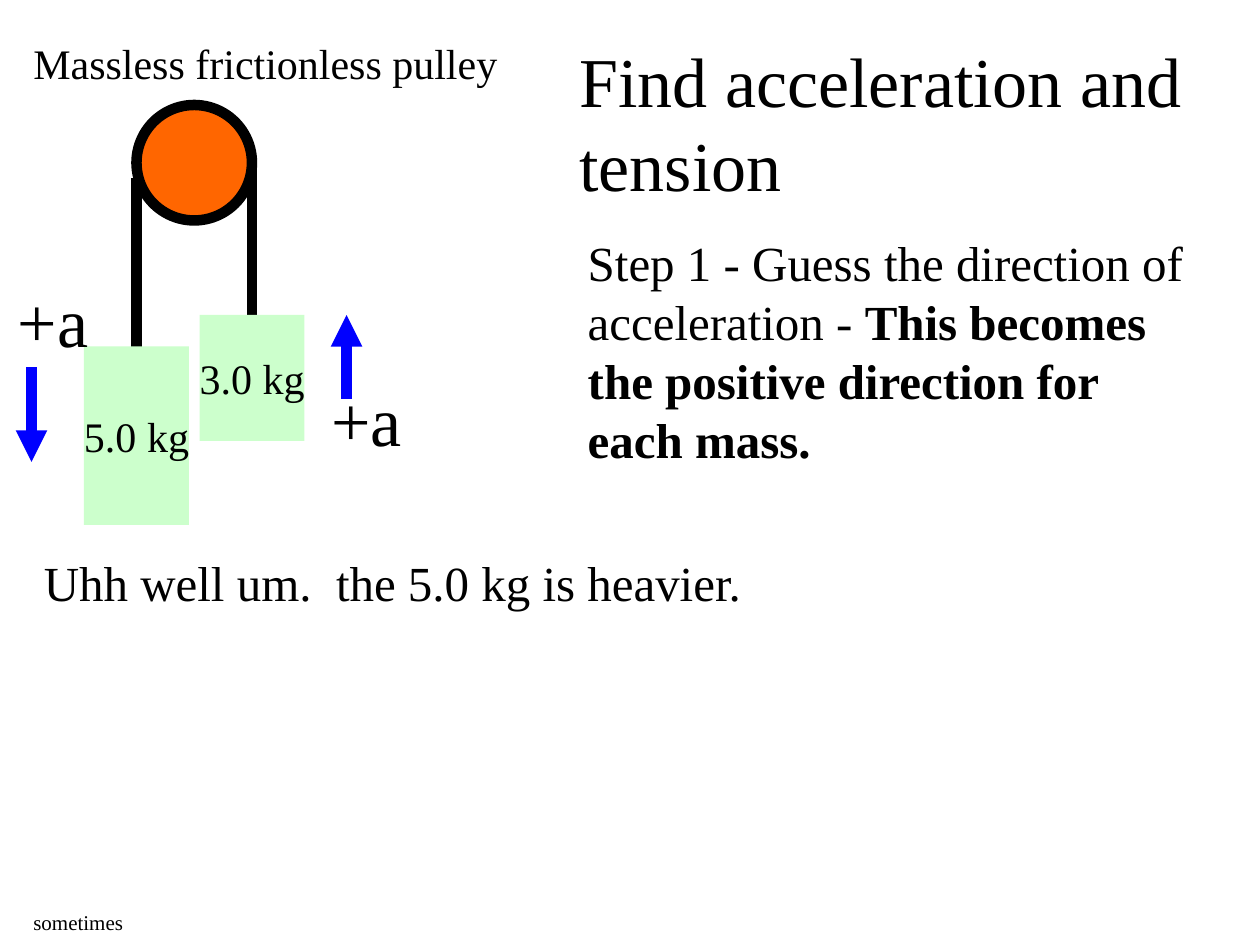
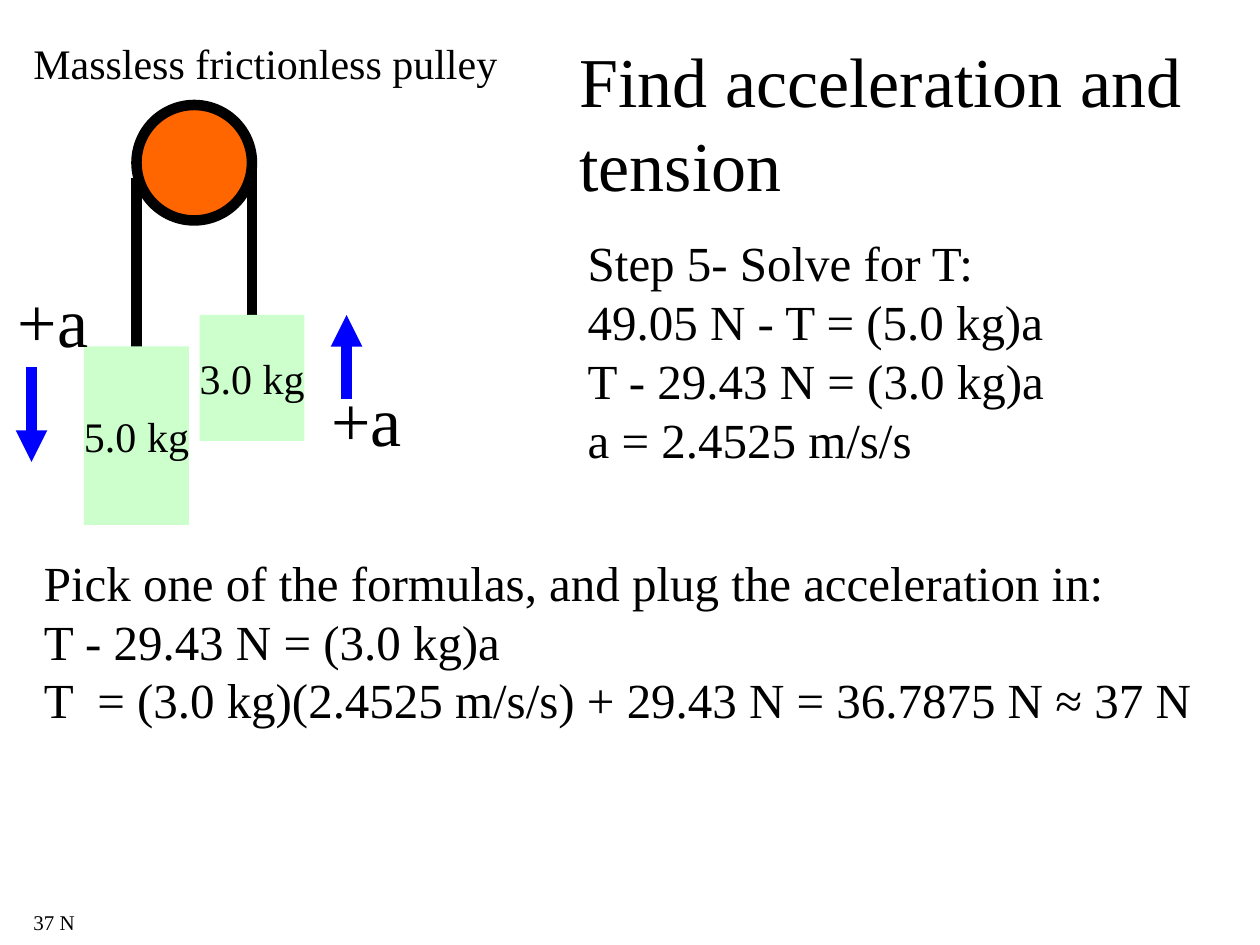
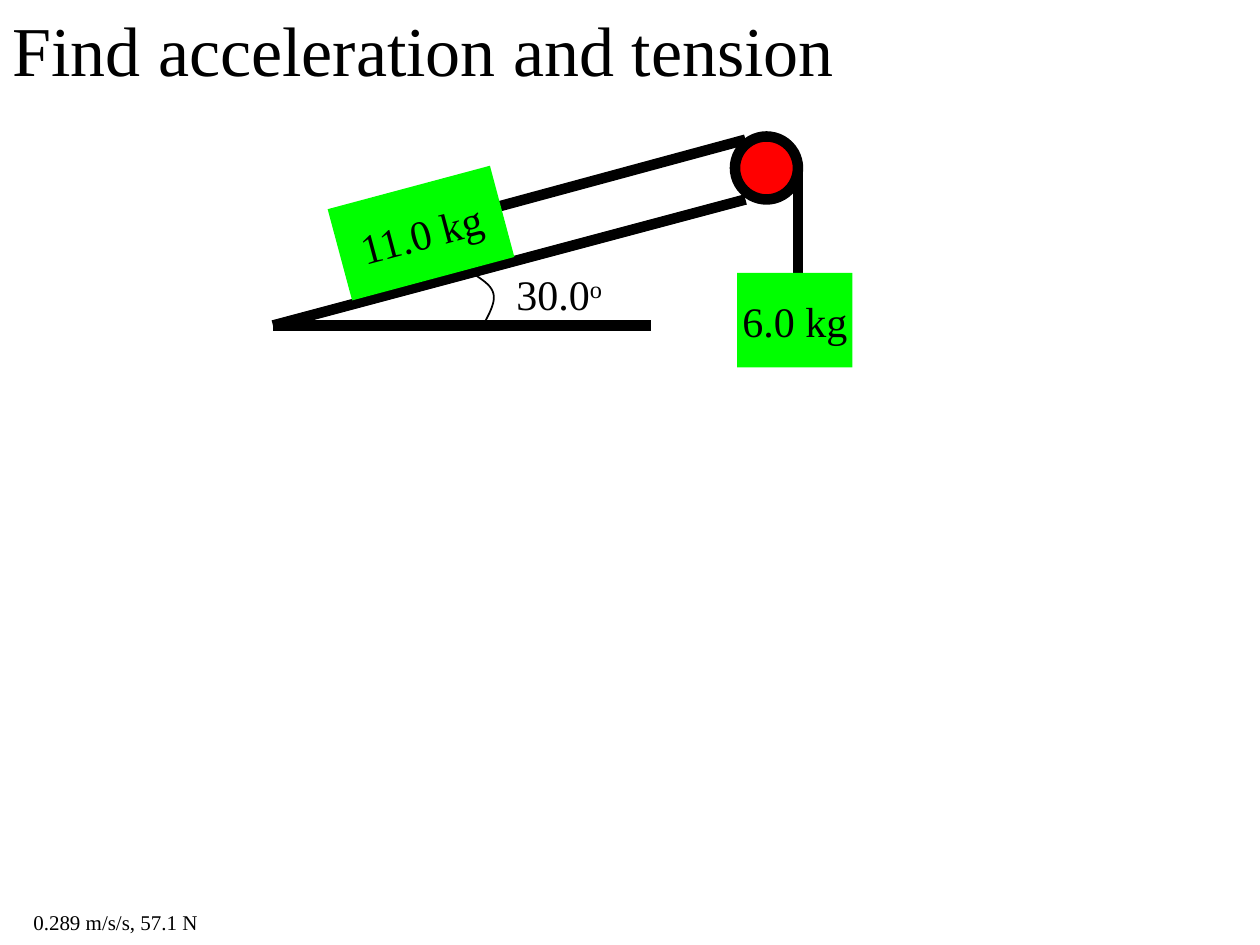
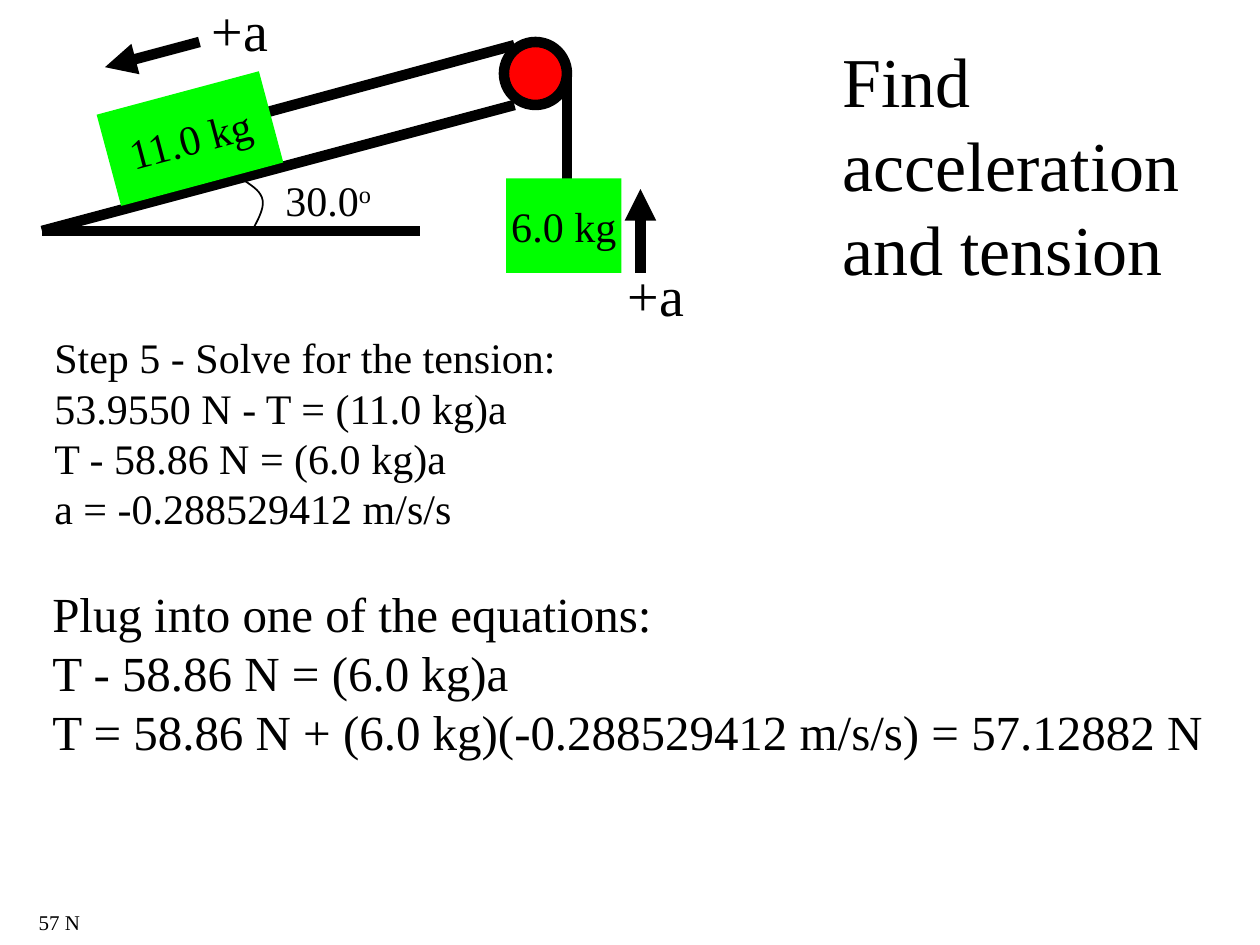
import lxml.etree
import pptx
import pptx.dml.color
import pptx.enum.shapes
import pptx.enum.text
import pptx.oxml.ns
import pptx.util

BLACK = pptx.dml.color.RGBColor(0x00, 0x00, 0x00)
BLUE = pptx.dml.color.RGBColor(0x00, 0x00, 0xFF)
ORANGE = pptx.dml.color.RGBColor(0xFF, 0x66, 0x00)
MINT = pptx.dml.color.RGBColor(0xCC, 0xFF, 0xCC)
RED = pptx.dml.color.RGBColor(0xFF, 0x00, 0x00)
GREEN = pptx.dml.color.RGBColor(0x00, 0xFF, 0x00)

FONT = "Times New Roman"
TITLE = "Find acceleration and tension"
CELL = pptx.util.Inches(1 / 12)  # the slide is a grid of 120 columns by 90 rows
STROKE = pptx.util.Pt(6)
FOOTER_TOP, FOOTER_HEIGHT = 86, 3.6
SHAPES = pptx.enum.shapes.MSO_SHAPE
ALIGN = pptx.enum.text.PP_ALIGN
ANCHOR = pptx.enum.text.MSO_ANCHOR
AUTO_SIZE = pptx.enum.text.MSO_AUTO_SIZE


def write(shape, paragraphs, size, align=ALIGN.LEFT, **frame_format):
    """Fill a shape; a paragraph is a string or a list of (text, style) runs."""
    frame = shape.text_frame
    for name, value in frame_format.items():
        setattr(frame, name, value)
    for index, content in enumerate(paragraphs):
        paragraph = frame.add_paragraph() if index else frame.paragraphs[0]
        paragraph.alignment = align
        runs = [(content, None)] if isinstance(content, str) else content
        for text, style in runs:
            run = paragraph.add_run()
            run.text = text
            run.font.name = FONT
            run.font.size = pptx.util.Pt(size)
            run.font.color.rgb = BLACK
            if style == "bold":
                run.font.bold = True
            elif style == "superscript":
                run.font._element.set("baseline", "30000")


def draw_line(slide, start, end, color=BLACK, arrow=False):
    ends = [round(value * CELL) for value in (*start, *end)]
    connector = slide.shapes.add_connector(pptx.enum.shapes.MSO_CONNECTOR.STRAIGHT, *ends)
    connector.line.color.rgb = color
    connector.line.width = STROKE
    if arrow:
        tail = lxml.etree.SubElement(connector.line._get_or_add_ln(), pptx.oxml.ns.qn("a:tailEnd"))
        tail.set("type", "triangle")
    lxml.etree.SubElement(connector._element.spPr, pptx.oxml.ns.qn("a:effectLst"))


# Hanging-mass diagram, in cells from the slide's corner
hanging = {
    "origin": (0, 0),
    "wheel": ((13, 10, 11, 11), ORANGE),
    "lines": [((13, 17), (13, 34)), ((24, 16), (24, 33))],
    "blocks": [("5.0 kg", (8, 33, 10, 17), 0), ("3.0 kg", (19, 30, 10, 12), 0)],
    "block_color": MINT,
    "arc": None,
    "labels": [(["Massless frictionless pulley"], (2, 3, 46.6, 6), 24, False)],
}
hanging_arrows = [((3, 35), (3, 44)), ((33, 38), (33, 30))]
hanging_signs = [(["+a"], (0.5, 25.8, 9.1, 9.2), 40, False),
                 (["+a"], (30.4, 35.3, 9.1, 9.2), 40, False)]

# Incline diagram, in cells from the foot of the slope
incline = {
    "wheel": ((44, -18, 6, 6), RED),
    "lines": [((0, 0), (45, -12)), ((0, 0), (36, 0)),
              ((45, -17.7), (21, -11.2)), ((50, -15), (50, -4))],
    "blocks": [("6.0 kg", (44.2, -5, 11, 9), 0), ("11.0 kg", (6.1, -13.3, 16, 9), -15)],
    "block_color": GREEN,
    "arc": [((19, -5), (19.8, -4.4), (20.8, -3.9), (21, -3)),
            ((21, -3), (21.2, -2.2), (20.6, -1.1), (20, 0))],
    "labels": [([[("30.0", None), ("o", "superscript")]], (22, -6, 10.8, 6), 24, False)],
}

STEP_BOX = (54.8, 21.6, 61.2, 23.6)
slides = [
    {
        "diagram": hanging,
        "title_box": (54, 3, 63.2, 17.2),
        "footer": ("sometimes", 2, 11),
        "arrows": hanging_arrows,
        "arrow_color": BLUE,
        "texts": [
            ([[("Step 1 - Guess the direction of acceleration - ", None),
               ("This becomes the positive direction for each mass.", "bold")]],
             STEP_BOX, 28, True),
            (["Uhh well um.  the 5.0 kg is heavier."], (3, 52, 114, 6.8), 28, True),
            *hanging_signs,
        ],
    },
    {
        "diagram": hanging,
        "title_box": (54, 3, 63.2, 17.2),
        "footer": ("37 N", 2, 6.4),
        "arrows": hanging_arrows,
        "arrow_color": BLUE,
        "texts": [
            (["Step 5- Solve for T:", "49.05 N - T = (5.0 kg)a",
              "T - 29.43 N = (3.0 kg)a", "a = 2.4525 m/s/s"], STEP_BOX, 28, True),
            (["Pick one of the formulas, and plug the acceleration in:",
              "T - 29.43 N = (3.0 kg)a",
              "T  = (3.0 kg)(2.4525 m/s/s) + 29.43 N = 36.7875 N ≈ 37 N"],
             (3, 52, 114, 18), 28, True),
            *hanging_signs,
        ],
    },
    {
        "diagram": {**incline, "origin": (26, 31)},
        "title_box": (0, 0, 115, 9.2),
        "footer": ("0.289 m/s/s, 57.1 N", 2, 18.2),
        "arrows": [],
        "arrow_color": BLACK,
        "texts": [],
    },
    {
        "diagram": {**incline, "origin": (4, 22)},
        "title_box": (79, 3, 36, 25.2),
        "footer": ("57 N", 2.5, 6.4),
        "arrows": [((19, 4), (10, 6.4)), ((61, 26), (61, 18))],
        "arrow_color": BLACK,
        "texts": [
            (["Step 5 - Solve for the tension:", "53.9550 N - T = (11.0 kg)a",
              "T - 58.86 N = (6.0 kg)a", "a = -0.288529412 m/s/s"],
             (4, 31, 107, 20.4), 24, True),
            (["+a"], (58.6, 24.2, 7.8, 7.6), 32, False),
            (["+a"], (19, -1, 7.8, 7.6), 32, False),
            (["Plug into one of the equations:", "T - 58.86 N = (6.0 kg)a",
              "T = 58.86 N + (6.0 kg)(-0.288529412 m/s/s) = 57.12882 N"],
             (3.8, 55, 112.2, 18), 28, False),
        ],
    },
]

presentation = pptx.Presentation()
presentation.slide_width = 120 * CELL
presentation.slide_height = 90 * CELL
title_only = presentation.slide_layouts.get_by_name("Title Only")

for content in slides:
    slide = presentation.slides.add_slide(title_only)
    diagram = content["diagram"]
    column, row = diagram["origin"]

    title = slide.shapes.title
    for side, value in zip(("left", "top", "width", "height"), content["title_box"]):
        setattr(title, side, round(value * CELL))
    write(title, [TITLE], 40, word_wrap=True, vertical_anchor=ANCHOR.TOP,
          auto_size=AUTO_SIZE.SHAPE_TO_FIT_TEXT)

    (left, top, width, height), wheel_color = diagram["wheel"]
    box = [round(value * CELL) for value in (left + column, top + row, width, height)]
    wheel = slide.shapes.add_shape(SHAPES.OVAL, *box)
    wheel.shadow.inherit = False
    wheel.fill.solid()
    wheel.fill.fore_color.rgb = wheel_color
    wheel.line.color.rgb = BLACK
    wheel.line.width = STROKE

    for start, end in diagram["lines"]:
        draw_line(slide, (start[0] + column, start[1] + row), (end[0] + column, end[1] + row))

    for mass, (left, top, width, height), rotation in diagram["blocks"]:
        box = [round(value * CELL) for value in (left + column, top + row, width, height)]
        block = slide.shapes.add_shape(SHAPES.RECTANGLE, *box)
        block.shadow.inherit = False
        block.rotation = rotation
        block.fill.solid()
        block.fill.fore_color.rgb = diagram["block_color"]
        block.line.fill.background()
        write(block, [mass], 24, ALIGN.CENTER, word_wrap=False, vertical_anchor=ANCHOR.MIDDLE)

    if diagram["arc"]:
        points = []
        for curve in diagram["arc"]:
            for step in range(11):
                t = step / 10
                weights = ((1 - t) ** 3, 3 * t * (1 - t) ** 2, 3 * t ** 2 * (1 - t), t ** 3)
                x, y = (sum(w * p[axis] for w, p in zip(weights, curve)) for axis in (0, 1))
                points.append((round((x + column) * CELL), round((y + row) * CELL)))
        builder = slide.shapes.build_freeform(*points[0])
        builder.add_line_segments(points[1:], close=False)
        arc = builder.convert_to_shape()
        arc.shadow.inherit = False
        arc.fill.background()
        arc.line.color.rgb = BLACK
        arc.line.width = pptx.util.Pt(1)

    for start, end in content["arrows"]:
        draw_line(slide, start, end, content["arrow_color"], arrow=True)

    footer, footer_left, footer_width = content["footer"]
    labels = [(lines, (left + column, top + row, width, height), size, wrap)
              for lines, (left, top, width, height), size, wrap in diagram["labels"]]
    footer_box = (footer_left, FOOTER_TOP, footer_width, FOOTER_HEIGHT)
    for lines, box, size, wrap in [([footer], footer_box, 12, False), *labels, *content["texts"]]:
        text_box = slide.shapes.add_textbox(*[round(value * CELL) for value in box])
        write(text_box, lines, size, word_wrap=wrap, auto_size=AUTO_SIZE.SHAPE_TO_FIT_TEXT)

presentation.save("out.pptx")
